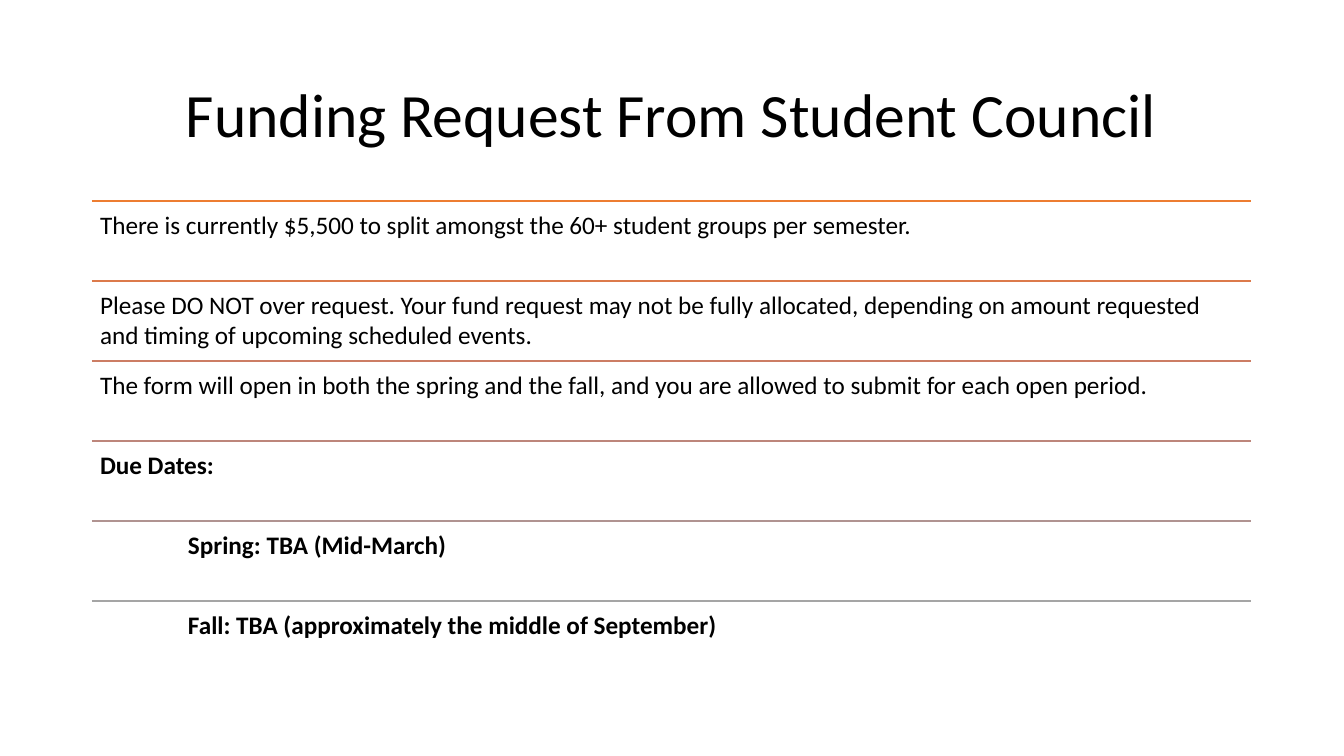
from lxml.etree import SubElement
from pptx import Presentation
from pptx.dml.color import RGBColor
from pptx.enum.shapes import MSO_CONNECTOR
from pptx.enum.text import MSO_ANCHOR, PP_ALIGN
from pptx.oxml.ns import qn
from pptx.util import Pt

PX = 914400 / 100.8
FONT = "Calibri"
BLACK = RGBColor(0x00, 0x00, 0x00)

LEFT, WIDTH = 92, 1159
ROWS_TOP, ROW_H = 201, 80
TAB_STOP = 88

# Rule colour, text, bold
ROWS = [
    (RGBColor(0xED, 0x7D, 0x31),
     "There is currently $5,500 to split amongst the 60+ student groups per semester.", False),
    (RGBColor(0xDC, 0x7A, 0x4B),
     "Please DO NOT over request. Your fund request may not be fully allocated, "
     "depending on amount requested and timing of upcoming scheduled events.", False),
    (RGBColor(0xCC, 0x7D, 0x64),
     "The form will open in both the spring and the fall, "
     "and you are allowed to submit for each open period.", False),
    (RGBColor(0xBD, 0x86, 0x7B), "Due Dates:", True),
    (RGBColor(0xB0, 0x93, 0x91), "\tSpring: TBA (Mid-March)", True),
    (RGBColor(0xA5, 0xA5, 0xA5), "\tFall: TBA (approximately the middle of September)", True),
]


def px(n):
    return round(n * PX)


def add_text(s, text, top, height, size, inset_x, inset_y, bold=False):
    sp = s.shapes.add_textbox(px(LEFT), px(top), px(WIDTH), px(height))
    tf = sp.text_frame
    tf.word_wrap = True
    tf.margin_left = tf.margin_right = px(inset_x)
    tf.margin_top = tf.margin_bottom = px(inset_y)
    tf.text = text
    p = tf.paragraphs[0]
    for r in p.runs:
        r.font.name = FONT
        r.font.size = Pt(size)
        r.font.bold = bold
        r.font.color.rgb = BLACK
    return tf


def add_tab_stop(p, pos):
    tabs = SubElement(p._p.get_or_add_pPr(), qn("a:tabLst"))
    SubElement(tabs, qn("a:tab"), pos=str(px(pos)), algn="l")


def add_rule(s, y, color):
    line = s.shapes.add_connector(
        MSO_CONNECTOR.STRAIGHT, px(LEFT), px(y), px(LEFT + WIDTH), px(y))
    line.line.color.rgb = color
    line.line.width = Pt(1)
    SubElement(line._element.spPr, qn("a:effectLst"))


def add_title(s, text):
    tf = add_text(s, text, 45, 146, 44, 10, 5)
    tf.vertical_anchor = MSO_ANCHOR.MIDDLE
    p = tf.paragraphs[0]
    p.alignment = PP_ALIGN.CENTER
    p.line_spacing = 0.9


def add_row(s, top, color, text, bold):
    add_rule(s, top, color)
    tf = add_text(s, text, top, ROW_H, 18, 8, 8, bold)
    if text.startswith("\t"):
        add_tab_stop(tf.paragraphs[0], TAB_STOP)


def main():
    prs = Presentation()
    prs.slide_width, prs.slide_height = px(1344), px(756)
    s = prs.slides.add_slide(prs.slide_layouts[6])

    # Title
    add_title(s, "Funding Request From Student Council")

    # Ruled list
    for i, (color, text, bold) in enumerate(ROWS):
        add_row(s, ROWS_TOP + i * ROW_H, color, text, bold)

    prs.save("out.pptx")


if __name__ == "__main__":
    main()
